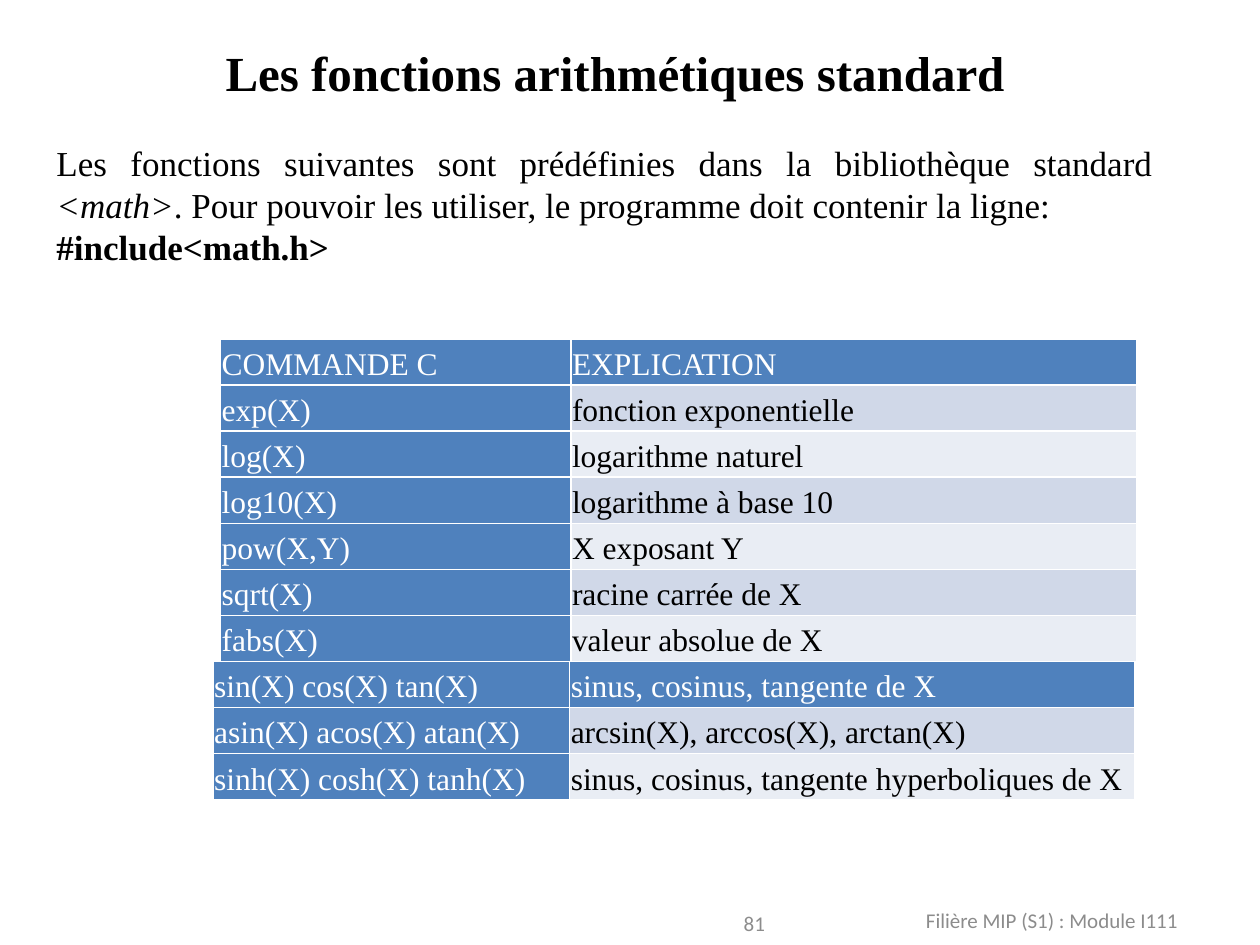
from lxml.etree import SubElement
from pptx import Presentation
from pptx.dml.color import RGBColor
from pptx.enum.text import MSO_ANCHOR, PP_ALIGN
from pptx.oxml import parse_xml
from pptx.oxml.ns import nsdecls
from pptx.util import Inches, Pt

BLACK = RGBColor(0x00, 0x00, 0x00)
WHITE = RGBColor(0xFF, 0xFF, 0xFF)
GREY = RGBColor(0x8C, 0x8C, 0x8C)
BLUE = RGBColor(0x4F, 0x81, 0xBD)
BANDS = [RGBColor(0xE9, 0xED, 0xF4), RGBColor(0xD0, 0xD8, 0xE8)]
SERIF = "Times New Roman"
ROW_H = 0.366


def add_run(p, text, size, color, font=SERIF, bold=False, italic=False):
    r = p.add_run()
    r.text = text
    r.font.name, r.font.size = font, Pt(size)
    r.font.bold, r.font.italic = bold, italic
    r.font.color.rgb = color


def add_function_table(s, left, top, widths, rows):
    frame = s.shapes.add_table(len(rows), 2, Inches(left), Inches(top),
                               Inches(sum(widths)), Inches(ROW_H * len(rows)))
    table = frame.table
    for col, width in zip(table.columns, widths):
        col.width = Inches(width)
    for i, row in enumerate(rows):
        table.rows[i].height = Inches(ROW_H)
        for j, text in enumerate(row):
            cell = table.cell(i, j)
            dark = i == 0 or j == 0
            cell.margin_left = cell.margin_right = Inches(0.01)
            cell.margin_top = cell.margin_bottom = Inches(0.01)
            cell.vertical_anchor = MSO_ANCHOR.MIDDLE
            p = cell.text_frame.paragraphs[0]
            p.alignment = PP_ALIGN.JUSTIFY
            p.line_spacing = 1.15
            add_run(p, text, 18, WHITE if dark else BLACK)
            # White borders come before the fill in the cell properties
            tcPr = cell._tc.get_or_add_tcPr()
            for side in "LRTB":
                tcPr.append(parse_xml(
                    f'<a:ln{side} w="12700" {nsdecls("a")}><a:solidFill>'
                    f'<a:srgbClr val="{WHITE}"/></a:solidFill></a:ln{side}>'))
            cell.fill.solid()
            cell.fill.fore_color.rgb = BLUE if dark else BANDS[i % 2]


prs = Presentation()
prs.slide_width, prs.slide_height = Inches(10), Inches(7.5)
s = prs.slides.add_slide(prs.slide_layouts[5])

# Title
title = s.shapes.title
title.left, title.top = Inches(1.69), Inches(0.29)
title.width, title.height = Inches(6.46), Inches(0.57)
tf = title.text_frame
tf.word_wrap = False
tf.vertical_anchor = MSO_ANCHOR.TOP
p = tf.paragraphs[0]
p.alignment = PP_ALIGN.LEFT
add_run(p, "Les fonctions arithmétiques standard", 28, BLACK, bold=True)

# Introduction
tf = s.shapes.add_textbox(Inches(0.35), Inches(1.07), Inches(8.9), Inches(1.45)).text_frame
tf.word_wrap = True
p = tf.paragraphs[0]
p.alignment = PP_ALIGN.JUSTIFY
add_run(p, "Les fonctions suivantes sont prédéfinies dans la bibliothèque standard ", 20, BLACK)
add_run(p, "<math>", 20, BLACK, italic=True)
add_run(p, ". Pour pouvoir les utiliser, le programme doit contenir la ligne:", 20, BLACK)
p = tf.add_paragraph()
p.alignment = PP_ALIGN.JUSTIFY
add_run(p, "#include<math.h>", 20, BLACK, bold=True)

# Function tables
add_function_table(s, 1.75, 2.69, [2.78, 4.49], [
    ("COMMANDE C", "EXPLICATION"),
    ("exp(X)", "fonction exponentielle"),
    ("log(X)", "logarithme naturel"),
    ("log10(X)", "logarithme à base 10"),
    ("pow(X,Y)", "X exposant Y"),
    ("sqrt(X)", "racine carrée de X"),
    ("fabs(X)", "valeur absolue de X"),
])
add_function_table(s, 1.69, 5.25, [2.83, 4.49], [
    ("sin(X) cos(X) tan(X)", "sinus, cosinus, tangente de X"),
    ("asin(X) acos(X) atan(X)", "arcsin(X), arccos(X), arctan(X)"),
    ("sinh(X) cosh(X) tanh(X)", "sinus, cosinus, tangente hyperboliques de X"),
])

# Slide number and footer
for text, left, top, width, align in [
    ("81", 4.17, 7.13, 2, PP_ALIGN.RIGHT),
    ("Filière MIP (S1) : Module I111", 7.25, 7.1, 2.75, PP_ALIGN.LEFT),
]:
    tf = s.shapes.add_textbox(Inches(left), Inches(top), Inches(width), Inches(0.4)).text_frame
    tf.word_wrap = True
    tf.vertical_anchor = MSO_ANCHOR.MIDDLE
    p = tf.paragraphs[0]
    p.alignment = align
    add_run(p, text, 12, GREY, font="Calibri")

prs.save("out.pptx")
